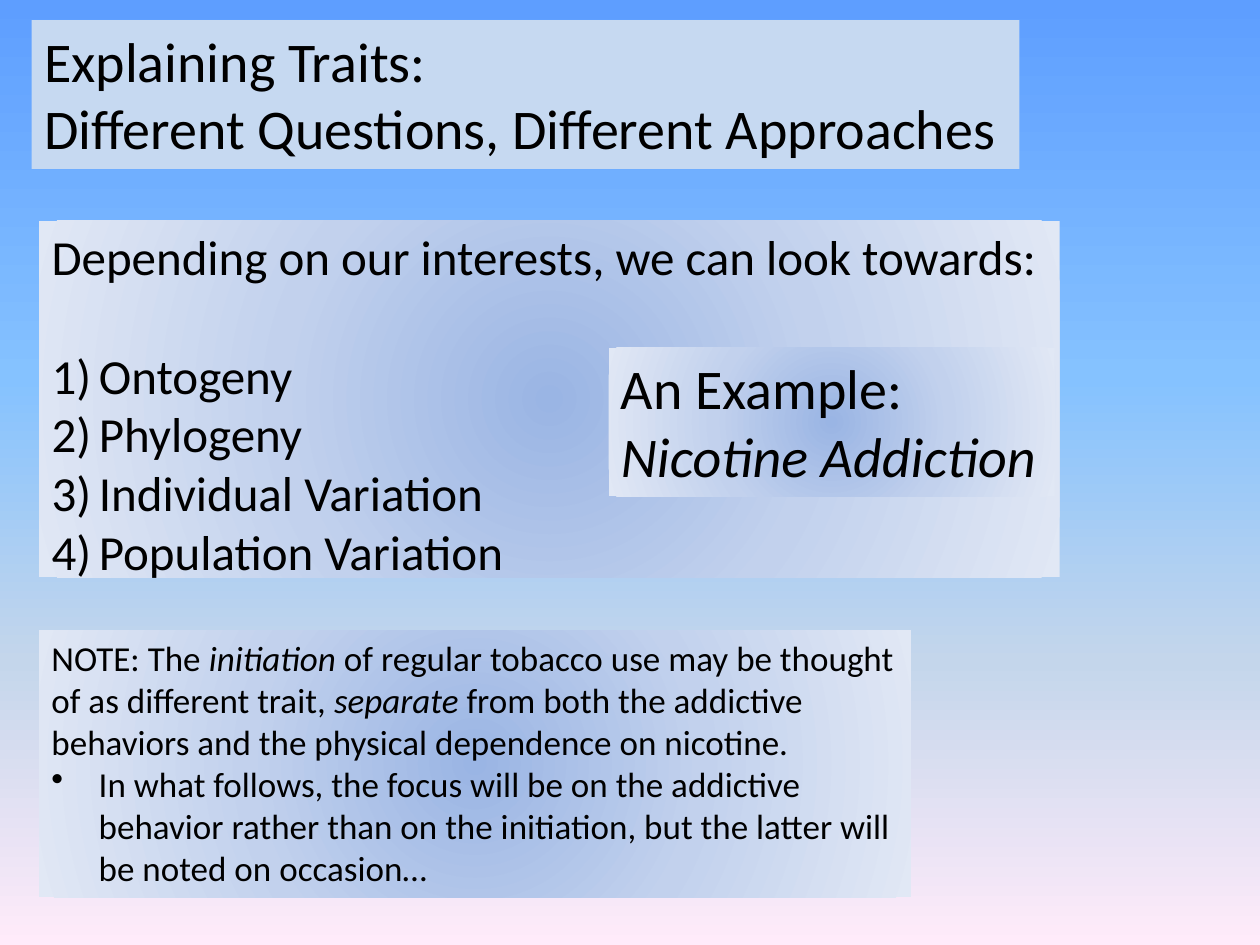
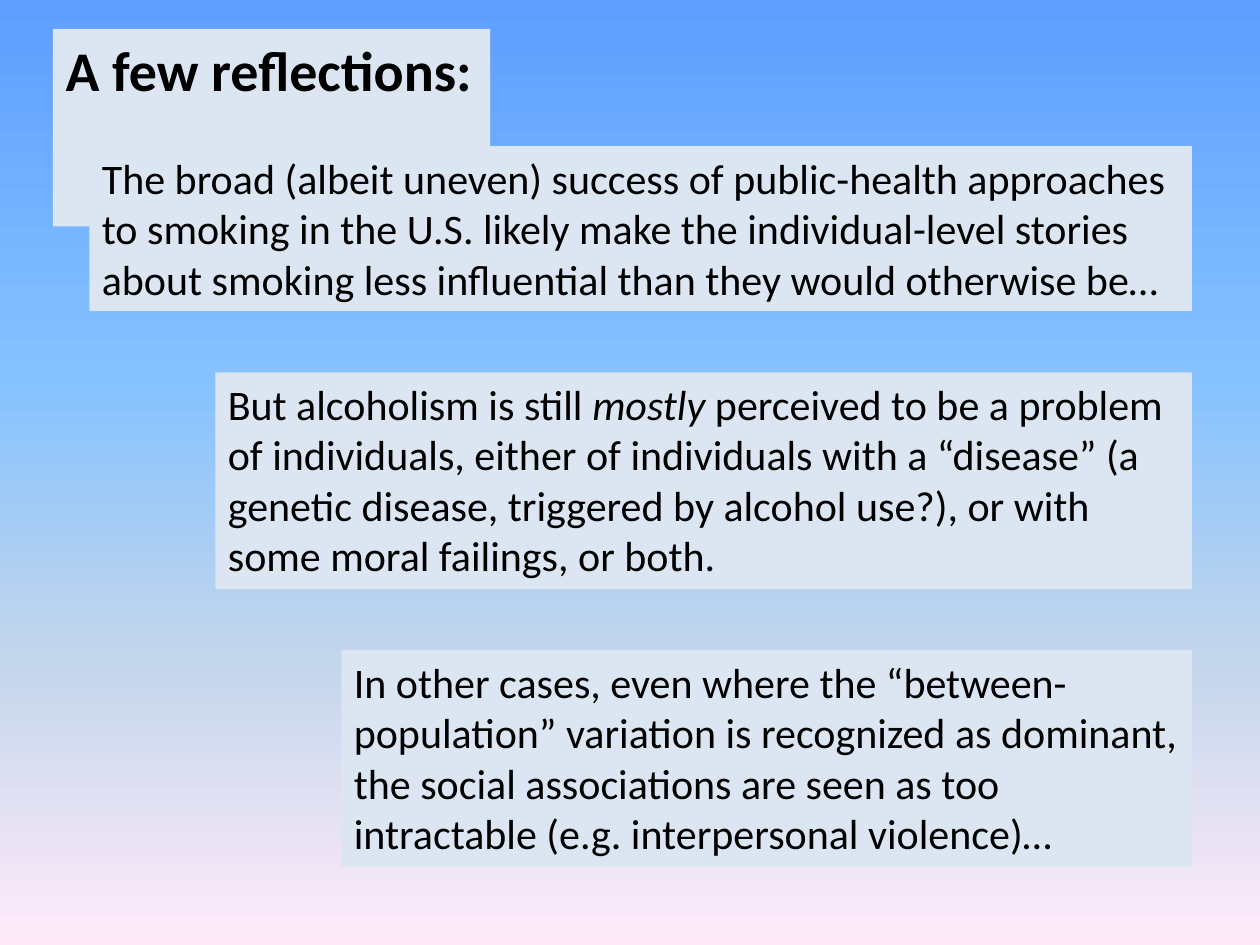
import pptx
import pptx.util
import pptx.dml.color
import pptx.enum.dml
import pptx.enum.text
import pptx.oxml
from pptx.oxml.ns import nsdecls, qn

FONT = "Calibri"
COLORS = {"text": "000000", "title": "C6D9F1", "panel": "DCE6F2"}
SKY = [(0, "5E9EFF"), (40, "85C2FF"), (70, "C4D6EB"), (100, "FFEBFA")]
GLOW = [(0, "9AB5E4"), (50, "C2D1ED"), (100, "E1E8F5")]
LINEAR = '<a:lin ang="5400000" scaled="0"/>'
RADIAL = ('<a:path path="circle"><a:fillToRect l="50000" t="50000" '
          'r="50000" b="50000"/></a:path>')
COLS, ROWS = 100, 75  # grid over a 10 x 7.5 inch slide
CELL = pptx.util.Inches(0.1)
HANG = 3.75  # hanging indent of list items, in columns


def grid(n):
    return pptx.util.Emu(round(n * CELL))


def rgb(name):
    return pptx.dml.color.RGBColor.from_string(COLORS[name])


def gradient(stops, shading):
    """Return a gradFill element."""
    gs = "".join(f'<a:gs pos="{pos * 1000}"><a:srgbClr val="{color}"/></a:gs>'
                 for pos, color in stops)
    return pptx.oxml.parse_xml(f'<a:gradFill {nsdecls("a")} rotWithShape="1">'
                               f'<a:gsLst>{gs}</a:gsLst>{shading}</a:gradFill>')


def swap_gradient(fill, holder, stops, shading):
    """Give a fill its gradient stops and shading."""
    fill.gradient()
    old = holder.find(qn("a:gradFill"))
    holder.replace(old, gradient(stops, shading))


def set_background(master):
    swap_gradient(master.background.fill,
                  master.element.find(".//" + qn("p:bgPr")), SKY, LINEAR)


def set_bullet(p, bullet):
    """Number, bullet or plain paragraph, with a matching indent."""
    pPr = p._p.get_or_add_pPr()
    pPr.set("marL", str(grid(HANG if bullet else 0)))
    pPr.set("indent", str(grid(-HANG if bullet else 0)))
    tag = {"number": '<a:buAutoNum {} type="arabicParenR"/>',
           "dot": '<a:buChar {} char="•"/>'}.get(bullet, "<a:buNone {}/>")
    element = pptx.oxml.parse_xml(tag.format(nsdecls("a")))
    defaults = pPr.find(qn("a:defRPr"))
    defaults.addprevious(element)


def add_paragraph(p, text, size, bold=False, bullet=None, before=0):
    """Fill a paragraph; words between asterisks become italic."""
    p.alignment = pptx.enum.text.PP_ALIGN.LEFT
    p.space_before = pptx.util.Pt(before)
    p.font.name, p.font.size, p.font.bold = FONT, pptx.util.Pt(size), bold
    p.font.color.rgb = rgb("text")
    set_bullet(p, bullet)
    for i, part in enumerate(text.split("*")):
        if part:
            r = p.add_run()
            r.text = part
            if i % 2:
                r.font.italic = True


def fill_panel(sp, at, fill, size, paragraphs, wrap=True, bold=False):
    """Place a panel on the grid; fill is a colour name or 'glow'."""
    sp.left, sp.top, sp.width, sp.height = map(grid, at)
    if fill == "glow":
        swap_gradient(sp.fill, sp._element.spPr, GLOW, RADIAL)
    else:
        sp.fill.solid()
        sp.fill.fore_color.rgb = rgb(fill)
    tf = sp.text_frame
    tf.word_wrap = wrap
    tf.auto_size = pptx.enum.text.MSO_AUTO_SIZE.SHAPE_TO_FIT_TEXT
    tf.vertical_anchor = pptx.enum.text.MSO_ANCHOR.TOP
    for i, (text, options) in enumerate(paragraphs):
        p = tf.add_paragraph() if i else tf.paragraphs[0]
        add_paragraph(p, text, size, bold, **options)


def add_panel(s, at, fill, size, paragraphs, **options):
    sp = s.shapes.add_textbox(0, 0, CELL, CELL)
    fill_panel(sp, at, fill, size, paragraphs, **options)


def build_traits(prs):
    s = prs.slides.add_slide(prs.slide_layouts[1])
    fill_panel(s.shapes.title, (2.5, 1.6, 78.4, 11.8), "title", 32,
               [("Explaining Traits:", {}),
                ("Different Questions, Different Approaches", {})], wrap=False)

    # Approaches, with a blank line's height above the numbered list
    approaches = ["Ontogeny", "Phylogeny", "Individual Variation",
                  "Population Variation"]
    items = [(name, {"bullet": "number", "before": 0 if i else 34})
             for i, name in enumerate(approaches)]
    fill_panel(s.placeholders[1], (3.1, 17.5, 81, 29.3), "glow", 28,
               [("Depending on our interests, we can look towards:", {})] + items,
               wrap=False)

    # Example and note
    add_panel(s, (48.3, 27.6, 35.4, 11.8), "glow", 32,
              [("An Example:", {}), ("*Nicotine Addiction*", {})], wrap=False)
    add_panel(s, (3.1, 50, 69.2, 21.2), "glow", 20, [
        ("NOTE: The *initiation* of regular tobacco use may be thought of as "
         "different trait, *separate* from both the addictive behaviors and the "
         "physical dependence on nicotine.", {}),
        ("In what follows, the focus will be on the addictive behavior rather "
         "than on the initiation, but the latter will be noted on occasion…",
         {"bullet": "dot"})])


def build_reflections(prs):
    s = prs.slides.add_slide(prs.slide_layouts[5])
    fill_panel(s.shapes.title, (4.2, 2.3, 34.7, 6.4), "panel", 32,
               [("A few reflections:", {})], wrap=False, bold=True)

    # Staircase of panels sharing one right edge
    reflections = [
        (13.1, "The broad (albeit uneven) success of public-health approaches to "
               "smoking in the U.S. likely make the individual-level stories about "
               "smoking less influential than they would otherwise be…"),
        (17.2, "But alcoholism is still *mostly* perceived to be a problem of "
               "individuals, either of individuals with a “disease” (a genetic "
               "disease, triggered by alcohol use?), or with some moral failings, "
               "or both."),
        (17.2, "In other cases, even where the “between-population” variation is "
               "recognized as dominant, the social associations are seen as too "
               "intractable (e.g. interpersonal violence)…")]
    left, right, top, step, gap = 7.1, 94.6, 11.6, 10, 4.85
    for height, text in reflections:
        add_panel(s, (left, top, right - left, height), "panel", 24, [(text, {})])
        left += step
        top += height + gap


def main():
    prs = pptx.Presentation()
    prs.slide_width, prs.slide_height = grid(COLS), grid(ROWS)
    set_background(prs.slide_master)
    build_traits(prs)
    build_reflections(prs)
    prs.save("out.pptx")


if __name__ == "__main__":
    main()
